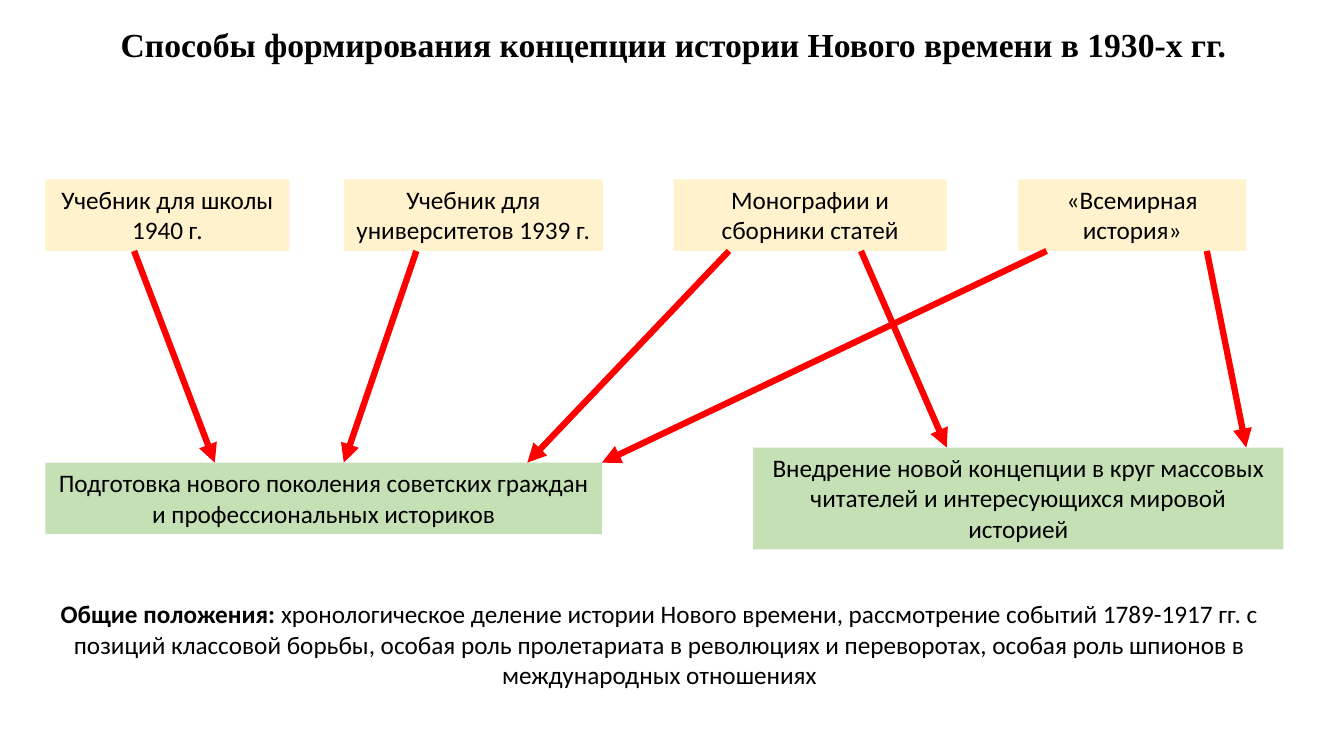
from lxml import etree
from pptx import Presentation
from pptx.dml.color import RGBColor
from pptx.enum.shapes import MSO_CONNECTOR, MSO_SHAPE
from pptx.enum.text import MSO_ANCHOR, PP_ALIGN
from pptx.oxml.ns import qn
from pptx.util import Inches, Pt

BLACK = RGBColor(0x00, 0x00, 0x00)
CREAM = RGBColor(0xFF, 0xF2, 0xCC)
GREEN = RGBColor(0xC5, 0xE0, 0xB4)
RED = RGBColor(0xFF, 0x00, 0x00)

TITLE = "Способы формирования концепции истории Нового времени в 1930-х гг."
SOURCE_TOP, SOURCE_HEIGHT = 1.78, 0.71
SOURCE_BOTTOM = SOURCE_TOP + SOURCE_HEIGHT
SOURCES = [
    (0.45, 2.42, "Учебник для школы 1940 г."),
    (3.41, 2.57, "Учебник для университетов 1939 г."),
    (6.68, 2.71, "Монографии и сборники статей"),
    (10.1, 2.26, "«Всемирная история»"),
]
TRAINING_BOX = (0.45, 4.59, 5.52, 0.71)
TRAINING = "Подготовка нового поколения советских граждан и профессиональных историков"
READERS_BOX = (7.47, 4.44, 5.26, 1.01)
READERS = ("Внедрение новой концепции в круг массовых читателей "
           "и интересующихся мировой историей")
ARROWS = [
    (1.33, 2.13, TRAINING_BOX),
    (4.13, 3.41, TRAINING_BOX),
    (7.23, 5.23, TRAINING_BOX),
    (8.54, 9.39, READERS_BOX),
    (10.38, 5.97, TRAINING_BOX),
    (11.97, 12.36, READERS_BOX),
]
SUMMARY_HEAD = "Общие положения: "
SUMMARY = ("хронологическое деление истории Нового времени, рассмотрение событий "
           "1789-1917 гг. с позиций классовой борьбы, особая роль пролетариата "
           "в революциях и переворотах, особая роль шпионов в международных отношениях")


def write_text(sp, runs, size=18, font="Calibri"):
    """Fill a shape with one centred paragraph of (text, bold) runs."""
    tf = sp.text_frame
    tf.word_wrap = True
    tf.vertical_anchor = MSO_ANCHOR.TOP
    p = tf.paragraphs[0]
    p.alignment = PP_ALIGN.CENTER
    for text, bold in runs:
        r = p.add_run()
        r.text = text
        r.font.name = font
        r.font.size = Pt(size)
        r.font.bold = bold
        r.font.color.rgb = BLACK


def add_text(s, box, runs, **style):
    """Place a text box in the given box."""
    write_text(s.shapes.add_textbox(*map(Inches, box)), runs, **style)


def add_block(s, box, text, color):
    """Place a filled rectangle with a caption in the given box."""
    sp = s.shapes.add_shape(MSO_SHAPE.RECTANGLE, *map(Inches, box))
    sp.shadow.inherit = False
    sp.fill.solid()
    sp.fill.fore_color.rgb = color
    sp.line.fill.background()
    write_text(sp, [(text, False)])


def add_arrow(s, x1, y1, x2, y2):
    """Draw a thick red arrow between two points."""
    line = s.shapes.add_connector(MSO_CONNECTOR.STRAIGHT, *map(Inches, (x1, y1, x2, y2)))
    line.line.color.rgb = RED
    line.line.width = Pt(4.5)
    etree.SubElement(line.line._get_or_add_ln(), qn("a:tailEnd"), type="triangle")
    etree.SubElement(line._element.spPr, qn("a:effectLst"))


def add_scheme(s):
    """Draw the sources, the goals and the arrows that join them."""
    for left, width, text in SOURCES:
        add_block(s, (left, SOURCE_TOP, width, SOURCE_HEIGHT), text, CREAM)
    add_block(s, TRAINING_BOX, TRAINING, GREEN)
    add_block(s, READERS_BOX, READERS, GREEN)
    for start, end, goal in ARROWS:
        add_arrow(s, start, SOURCE_BOTTOM, end, goal[1])


def main():
    """Build the slide and save it."""
    prs = Presentation()
    prs.slide_width, prs.slide_height = Inches(13.33), Inches(7.5)
    s = prs.slides.add_slide(prs.slide_layouts[6])
    add_text(s, (0.45, 0.19, 12.46, 0.5), [(TITLE, True)], size=24, font="Times New Roman")
    add_scheme(s)
    add_text(s, (0.35, 5.89, 12.38, 1.01), [(SUMMARY_HEAD, True), (SUMMARY, False)])
    prs.save("out.pptx")


if __name__ == "__main__":
    main()
